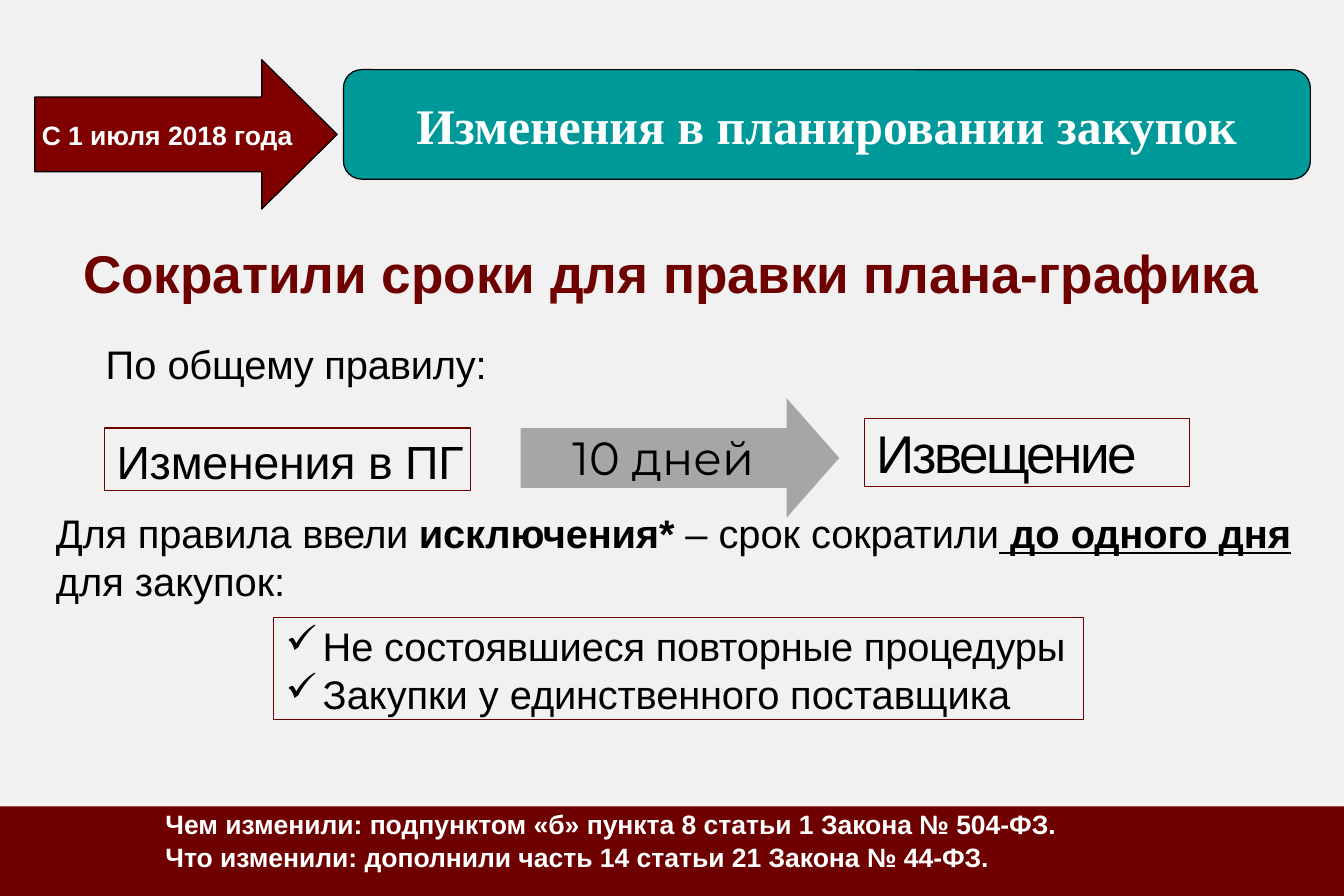
"""Build the slide on shorter deadlines for editing a procurement schedule."""
from lxml import etree
from pptx import Presentation
from pptx import util as u
from pptx.dml.color import RGBColor
from pptx.enum import shapes, text
from pptx.oxml import ns

prs = Presentation()
prs.slide_width, prs.slide_height = u.Inches(11.25), u.Inches(7.5)
COLS, ROWS = 270, 180
col, row = prs.slide_width / COLS, prs.slide_height / ROWS
MAROON, PALE, BLACK, WHITE = "6F0000", "F1F1F1", "000000", "FFFFFF"
KIND = shapes.MSO_SHAPE
rgb = RGBColor.from_string

s = prs.slides.add_slide(prs.slide_layouts[6])
s.background.fill.solid()
s.background.fill.fore_color.rgb = rgb(PALE)


def block(x, y, w, h, fill=None, line=None, kind=KIND.RECTANGLE, adj=(), top=0.01, wrap=True):
    """Add a text box, or a filled shape when a fill is given; the place is in grid cells."""
    box = [int(v) for v in (x * col, y * row, w * col, h * row)]
    if fill:
        sp = s.shapes.add_shape(kind, *box)
        sp.shadow.inherit = False
        sp.fill.solid()
        sp.fill.fore_color.rgb = rgb(fill)
        if line:
            sp.line.color.rgb = rgb(line)
            sp.line.width = u.Pt(0.75)
        else:
            sp.line.fill.background()
        for i, value in enumerate(adj):
            sp.adjustments[i] = value
    else:
        sp = s.shapes.add_textbox(*box)
    tf = sp.text_frame
    tf.word_wrap = wrap
    tf.margin_left = tf.margin_right = tf.margin_bottom = 0
    tf.margin_top = u.Inches(top if wrap else 0)
    tf.vertical_anchor = text.MSO_ANCHOR.TOP if wrap else text.MSO_ANCHOR.MIDDLE
    return tf


def write(tf, lines, size, color=BLACK, font="Arial", bold=False, center=False,
          before=(1, 1), left=0.01, hang=0, bullet=None):
    """Write paragraphs of runs; a run is (text, spacing in points, style letters)."""
    for i, runs in enumerate(lines):
        p = tf.add_paragraph() if i else tf.paragraphs[0]
        p.alignment = text.PP_ALIGN.CENTER if center else text.PP_ALIGN.LEFT
        p.space_before = u.Pt(before[i])
        pPr = p._p.get_or_add_pPr()
        pPr.set("marL", str(u.Inches(left)))
        pPr.set("indent", str(u.Inches(-hang)))
        if bullet:
            etree.SubElement(pPr, ns.qn("a:buChar")).set("char", bullet)
        for words, spacing, style in runs:
            r = p.add_run()
            r.text = words
            r.font.size, r.font.name = u.Pt(size), font
            r.font.color.rgb = rgb(color)
            r.font.bold = bold or "b" in style
            r.font.underline = "u" in style
            if spacing:
                r._r.get_or_add_rPr().set("spc", str(round(spacing * 100)))


title = block(10, 48, 249.5, 13)
write(title, [[("Сократили сроки для правки плана-графика", 0, "")]], 32, MAROON,
      bold=True, center=True)

rule = block(21, 68, 81, 10)
write(rule, [[("По ", 0, ""), ("общему правилу:", -0.1, "")]], 24)

block(0, 162, COLS, 18, MAROON)
law = block(33, 162, 204.5, 13.5)
write(law, [[("Чем изменили: подпунктом «б» пункта 8 статьи 1 Закона № 504-ФЗ.", 0, "")],
            [("Что изменили: дополнили часть 14 статьи 21 Закона № 44-ФЗ.", 0, "")]],
      16, WHITE, bold=True, left=0.33, hang=0.32)

changes = block(21, 86, 73.5, 12.5, PALE, MAROON, top=0.04)
write(changes, [[("Изменения в ПГ", -0.1, "")]], 28, before=[2.9], left=0.1)

notice = block(173.75, 84, 65.25, 13.75, PALE, MAROON, top=0.02)
write(notice, [[("Извещение", -1.6, "")]], 32, before=[1.7], left=0.1)

block(104.6, 80, 64, 24, "A6A6A6", kind=KIND.RIGHT_ARROW, adj=(0.5, 0.44))
days = block(114.75, 86, 50, 11.5)
write(days, [[("10 дней", 0, "")]], 28, font="Montserrat")

exception = block(11, 102, 252.25, 19.5)
write(exception, [[("Для правила ", -0.1, ""), ("ввели ", -0.3, ""), ("исключения* ", -0.1, "b"),
                   ("– срок ", 0, ""), ("сократили", -0.1, ""), (" ", -0.1, "u"),
                   ("до ", 0, "bu"), ("одного ", -0.1, "bu"), ("дня", 0, "bu"),
                   (" ", 0, "b"), ("для закупок:", 0, "")]], 24)

purchases = block(55, 124, 162.75, 20.5, PALE, MAROON, top=0.04)
write(purchases, [[("Не состоявшиеся повторные процедуры", -0.1, "")],
                  [("Закупки у ", 0, ""), ("единственного ", -0.1, ""), ("поставщика", 0, "")]],
      24, before=(3.1, 0), left=0.41, hang=0.31, bullet="✓")

banner = block(69, 14, 194.25, 22, "009999", BLACK, KIND.ROUNDED_RECTANGLE, (0.167,), wrap=False)
write(banner, [[("Изменения в планировании закупок", 0, "")]], 30, WHITE, "Times New Roman",
      bold=True, center=True, before=[0], left=0)

start = block(7, 12, 60.75, 30, "800000", BLACK, KIND.RIGHT_ARROW, (0.5, 0.506), wrap=False)
write(start, [[("С 1 июля 2018 года", 0, "")]], 16, WHITE,
      bold=True, center=True, before=[0], left=0)

prs.save("out.pptx")
